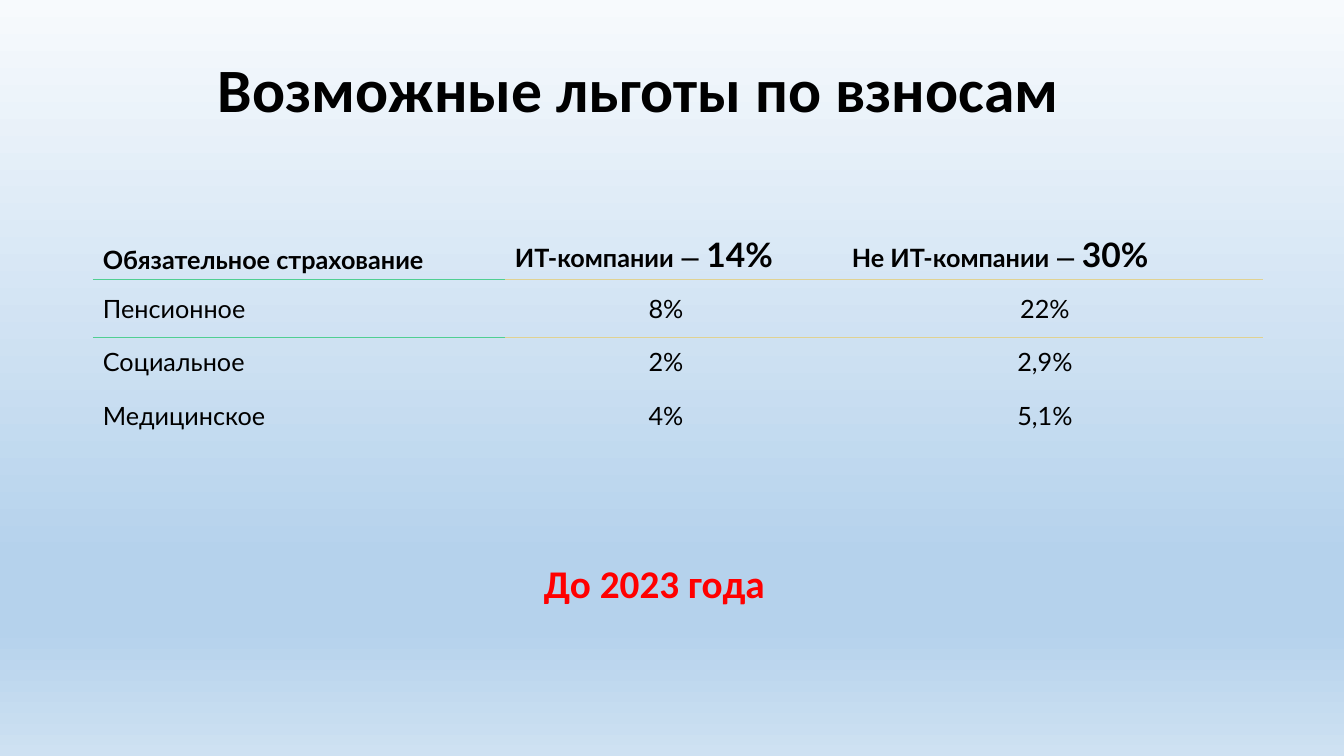
from copy import deepcopy

from lxml.etree import SubElement
from pptx import Presentation
from pptx.dml.color import RGBColor
from pptx.enum.text import MSO_ANCHOR as Anchor, PP_ALIGN as Align
from pptx.oxml import parse_xml
from pptx.oxml.ns import nsdecls, qn
from pptx.util import Pt

TITLE = "Возможные льготы по взносам"
DEADLINE = "До 2023 года"
HEADER = [
    ("Обязательное страхование", ""),
    ("ИТ-компании\u00a0— ", "14%"),
    ("Не ИТ-компании\u00a0— ", "30%"),
]
RATES = [
    ("Пенсионное", "8%", "22%"),
    ("Социальное", "2%", "2,9%"),
    ("Медицинское", "4%", "5,1%"),
]
COLORS = {
    "text": "000000",
    "deadline": "FF0000",
    "first_rule": "50CF92",
    "rule": "E0D292",
}
BACKGROUND = [(0, "F7FAFD"), (74, "B5D2EC"), (83, "B5D2EC"), (100, "CEE1F2")]
COLUMN_WIDTHS = [412, 337, 421]
ROW_HEIGHTS = [104, 58, 54, 58]
CELL_MARGINS = [(9, 4), (15, 5), (10, 5), (10, 5)]
NO_STYLE = "{2D5ABB26-0587-4C30-8999-92F81FD0307C}"


def px(length):
    return round(length * 914400 / 100.8)


def style(font, name, size, color, bold=False):
    font.name, font.size, font.bold = name, Pt(size), bold
    font.color.rgb = RGBColor.from_string(COLORS[color])


def paint_background(slide):
    fill = slide.background.fill
    fill.gradient()
    fill.gradient_angle = 270
    stops = slide.element.find(".//" + qn("a:gsLst"))
    sample = deepcopy(stops[0])
    for stop in list(stops):
        stops.remove(stop)
    for position, color in BACKGROUND:
        stop = deepcopy(sample)
        stop.set("pos", str(position * 1000))
        for child in list(stop):
            stop.remove(child)
        SubElement(stop, qn("a:srgbClr"), val=color)
        stops.append(stop)


def add_label(slide, text, box, size, color):
    frame = slide.shapes.add_textbox(*map(px, box)).text_frame
    frame.word_wrap = True
    label = frame.paragraphs[0]
    label.text = text
    style(label.font, "Calibri", size, color, True)
    return frame


def draw_rule(cell, side, color):
    cell._tc.get_or_add_tcPr().insert(0, parse_xml(
        f'<a:{side} {nsdecls("a")} w="{Pt(0.75)}"><a:solidFill>'
        f'<a:srgbClr val="{COLORS[color]}"/></a:solidFill></a:{side}>'))


def add_rates(slide):
    rows = [HEADER] + RATES
    frame = slide.shapes.add_table(
        len(rows), len(HEADER), px(93), px(175),
        px(sum(COLUMN_WIDTHS)), px(sum(ROW_HEIGHTS)))
    table = frame.table
    table._tbl.tblPr.find(qn("a:tableStyleId")).text = NO_STYLE
    table.horz_banding = False
    for column, width in zip(table.columns, COLUMN_WIDTHS):
        column.width = px(width)
    for r, values in enumerate(rows):
        table.rows[r].height = px(ROW_HEIGHTS[r])
        top, bottom = CELL_MARGINS[r]
        for c, value in enumerate(values):
            cell = table.cell(r, c)
            cell.fill.background()
            cell.margin_left, cell.margin_right = px(10), px(25)
            cell.margin_top, cell.margin_bottom = px(top), px(bottom)
            entry = cell.text_frame.paragraphs[0]
            style(entry.font, "Lato", 18, "text", r == 0)
            if r == 0:
                cell.vertical_anchor = Anchor.BOTTOM
                name, total = value
                entry.add_run().text = name
                if total:
                    total_run = entry.add_run()
                    total_run.text = total
                    total_run.font.size = Pt(24)
            else:
                entry.add_run().text = value
                entry.alignment = Align.CENTER if c else Align.LEFT
            if r < 2:
                draw_rule(cell, "lnT" if r else "lnB", "rule" if c else "first_rule")


def main():
    deck = Presentation()
    deck.slide_width, deck.slide_height = px(1344), px(756)
    slide = deck.slides.add_slide(deck.slide_layouts[6])
    paint_background(slide)
    title = add_label(slide, TITLE, (93, 42, 1092, 102), 44, "text")
    title.vertical_anchor = Anchor.MIDDLE
    title.paragraphs[0].alignment = Align.CENTER
    title.paragraphs[0].line_spacing = 0.9
    add_rates(slide)
    add_label(slide, DEADLINE, (534, 554, 287, 57), 28, "deadline")
    deck.save("out.pptx")


if __name__ == "__main__":
    main()
